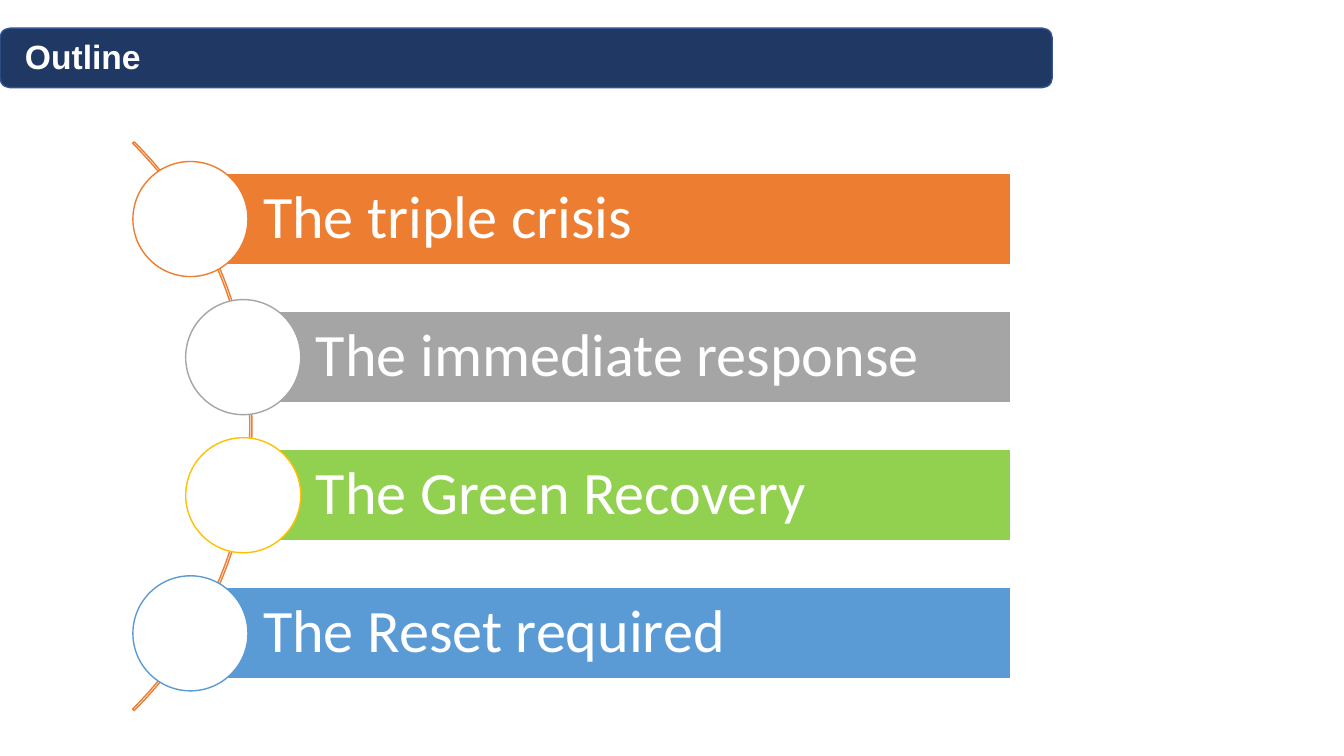
"""Build the outline slide: a title band and four bars hung on an arc."""
from pptx import Presentation
from pptx.dml.color import RGBColor
from pptx.enum.shapes import MSO_SHAPE
from pptx.enum.text import MSO_ANCHOR, PP_ALIGN
from pptx.util import Cm, Pt

ROUND, RECT = MSO_SHAPE.ROUNDED_RECTANGLE, MSO_SHAPE.RECTANGLE
OVAL, ARC = MSO_SHAPE.OVAL, MSO_SHAPE.BLOCK_ARC
MIDDLE, LEFT = MSO_ANCHOR.MIDDLE, PP_ALIGN.LEFT

WHITE = RGBColor(0xFF, 0xFF, 0xFF)
NAVY = RGBColor(0x20, 0x38, 0x64)
EDGE = RGBColor(0x32, 0x54, 0x91)
ORANGE = RGBColor(0xED, 0x7D, 0x31)
GRAY = RGBColor(0xA5, 0xA5, 0xA5)
GREEN = RGBColor(0x92, 0xD0, 0x50)
GOLD = RGBColor(0xFF, 0xC0, 0x00)
BLUE = RGBColor(0x5B, 0x9B, 0xD5)

TITLE = "Outline"
TOPICS = [
    ("The triple crisis", 4.8, ORANGE, ORANGE),
    ("The immediate response", 6.13, GRAY, GRAY),
    ("The Green Recovery", 6.13, GREEN, GOLD),
    ("The Reset required", 4.8, BLUE, BLUE),
]
HEAD_FONT = {"name": "Arial", "size": Pt(24), "bold": True}
BAR_FONT = {"name": "Calibri", "size": Pt(43)}
BAR_FRAME = {
    "word_wrap": True, "vertical_anchor": MIDDLE, "margin_left": Cm(1.83),
    "margin_right": Cm(0.3), "margin_top": Cm(0.3), "margin_bottom": Cm(0.3),
}

FIRST, STEP = 5.52, 3.48
RIGHT, BAR, DISC = 25.46, 2.3, 2.9
ARC_LEFT, ARC_SIZE = -13.92, 20.27


def apply(target, values):
    """Set each named attribute on the target."""
    for name, value in values.items():
        setattr(target, name, value)


def draw(slide, kind, box, fill, line):
    """Add a flat shape with a thin outline; box is in centimetres."""
    shape = slide.shapes.add_shape(kind, *map(Cm, box))
    shape.shadow.inherit = False
    if fill is None:
        shape.fill.background()
    else:
        shape.fill.solid()
        shape.fill.fore_color.rgb = fill
    shape.line.color.rgb = line
    shape.line.width = Pt(1)
    return shape


def write(shape, text, frame, font):
    """Put one left-aligned white line of text in the shape."""
    apply(shape.text_frame, frame)
    para = shape.text_frame.paragraphs[0]
    para.alignment = LEFT
    run = para.add_run()
    run.text = text
    apply(run.font, font)
    run.font.color.rgb = WHITE
    return para


def main():
    """Create and save the deck."""
    deck = Presentation()
    deck.slide_width, deck.slide_height = Cm(33.87), Cm(19.05)
    slide = deck.slides.add_slide(deck.slide_layouts[6])

    draw(slide, ROUND, (0, 0.71, 26.52, 1.5), NAVY, EDGE)
    head = slide.shapes.add_textbox(*map(Cm, (0.38, 0.79, 23.16, 1.27)))
    write(head, TITLE, {"word_wrap": True}, HEAD_FONT)

    center = FIRST + STEP * (len(TOPICS) - 1) / 2
    box = (ARC_LEFT, center - ARC_SIZE / 2, ARC_SIZE, ARC_SIZE)
    arc = draw(slide, ARC, box, None, ORANGE)
    for i, value in enumerate((189, 27, 0.0027)):
        arc.adjustments[i] = value

    for i, (text, left, fill, ring) in enumerate(TOPICS):
        mid = FIRST + STEP * i
        box = (left, mid - BAR / 2, RIGHT - left, BAR)
        bar = draw(slide, RECT, box, fill, WHITE)
        write(bar, text, BAR_FRAME, BAR_FONT).line_spacing = 0.9
        box = (left - DISC / 2, mid - DISC / 2, DISC, DISC)
        draw(slide, OVAL, box, WHITE, ring)

    deck.save("out.pptx")


if __name__ == "__main__":
    main()
